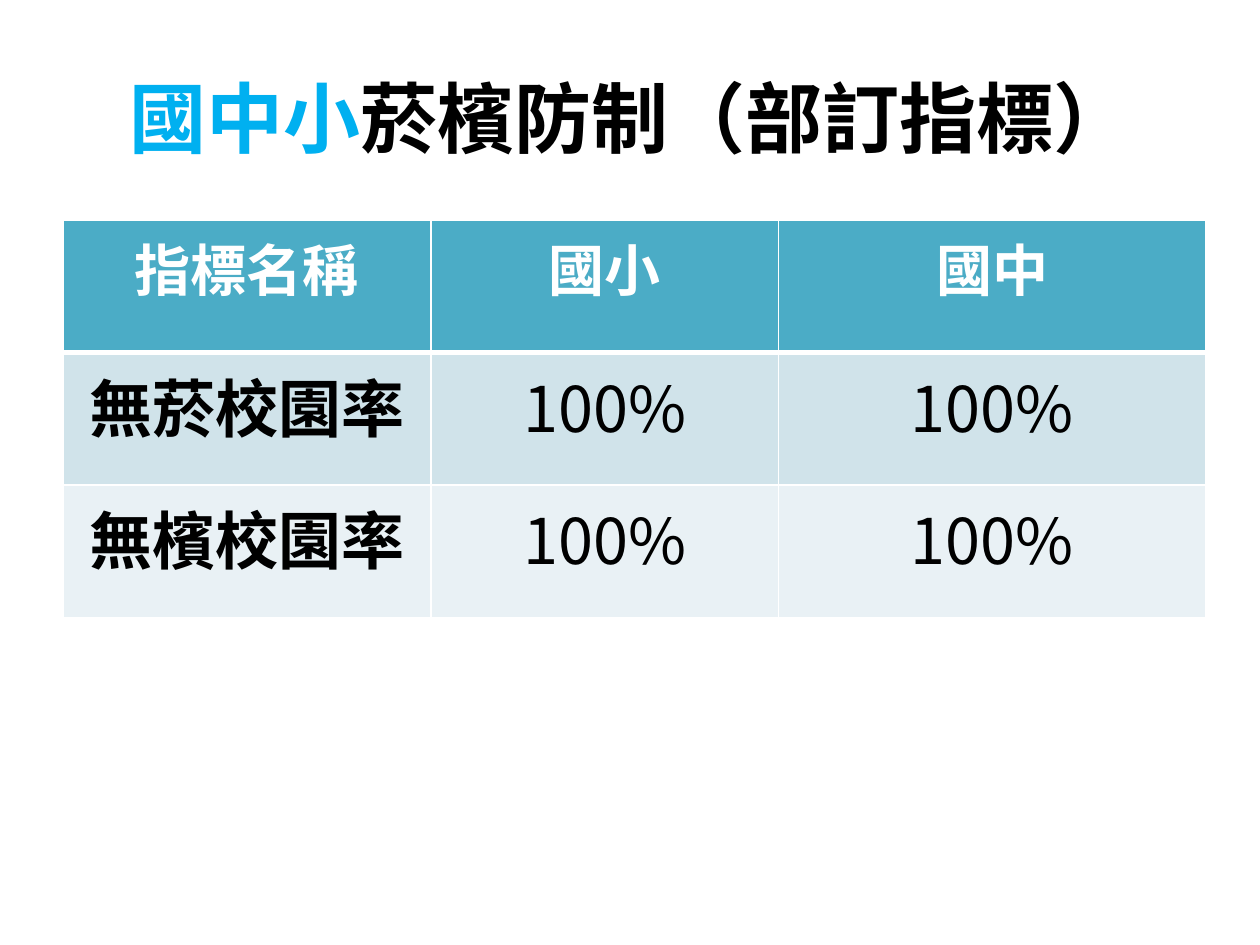
from lxml.etree import SubElement
from pptx import Presentation
from pptx.dml.color import RGBColor
from pptx.enum.text import MSO_ANCHOR, PP_ALIGN
from pptx.oxml.ns import qn
from pptx.util import Inches, Pt

COLORS = {
    "accent": "00B0F0",
    "text": "000000",
    "white": "FFFFFF",
    "header": "4BACC6",
    "band_dark": "D0E3EA",
    "band_light": "E9F1F5",
}
CJK_FONT = "Noto Sans CJK SC"


def add_span(para, text, color, **formats):
    para.alignment = PP_ALIGN.CENTER
    span = para.add_run()
    span.text = text
    for name, value in formats.items():
        setattr(span.font, name, value)
    span.font.color.rgb = RGBColor.from_string(COLORS[color])
    SubElement(span.font._element, qn("a:ea"), typeface=CJK_FONT)


def add_border(cell, side, width):
    properties = cell._tc.get_or_add_tcPr()
    line = SubElement(properties, qn(f"a:ln{side}"), w=str(Pt(width)))
    fill = SubElement(line, qn("a:solidFill"))
    SubElement(fill, qn("a:srgbClr"), val=COLORS["white"])


deck = Presentation()
deck.slide_width, deck.slide_height = Inches(10), Inches(7.5)
page = deck.slides.add_slide(deck.slide_layouts[6])

title_box = page.shapes.add_textbox(Inches(0.5), Inches(0.3), Inches(9), Inches(1.25))
title_box.text_frame.word_wrap = True
title_box.text_frame.vertical_anchor = MSO_ANCHOR.MIDDLE
title_para = title_box.text_frame.paragraphs[0]
for text, color in [("國中小", "accent"), ("菸檳防制（部訂指標）", "text")]:
    add_span(title_para, text, color, name="Calibri", size=Pt(44), bold=True)

rows = [
    ("header", "white", 32, ["指標名稱", "國小", "國中"]),
    ("band_dark", "text", 36, ["無菸校園率", "100%", "100%"]),
    ("band_light", "text", 36, ["無檳校園率", "100%", "100%"]),
]
column_widths = [2.92, 2.76, 3.39]
table = page.shapes.add_table(
    len(rows), len(column_widths), Inches(0.5), Inches(1.75), Inches(9.07), Inches(3.14)
).table
for column, width in zip(table.columns, column_widths):
    column.width = Inches(width)

for row_index, (fill, color, size, texts) in enumerate(rows):
    table.rows[row_index].height = Inches(1.05)
    for column_index, text in enumerate(texts):
        cell = table.cell(row_index, column_index)
        top = 3 if row_index == 1 else 1
        bottom = 3 if row_index == 0 else 1
        for side, width in [("L", 1), ("R", 1), ("T", top), ("B", bottom)]:
            add_border(cell, side, width)
        cell.fill.solid()
        cell.fill.fore_color.rgb = RGBColor.from_string(COLORS[fill])
        bold = row_index == 0 or column_index == 0
        para = cell.text_frame.paragraphs[0]
        add_span(para, text, color, name=CJK_FONT, size=Pt(size), bold=bold)

deck.save("out.pptx")
